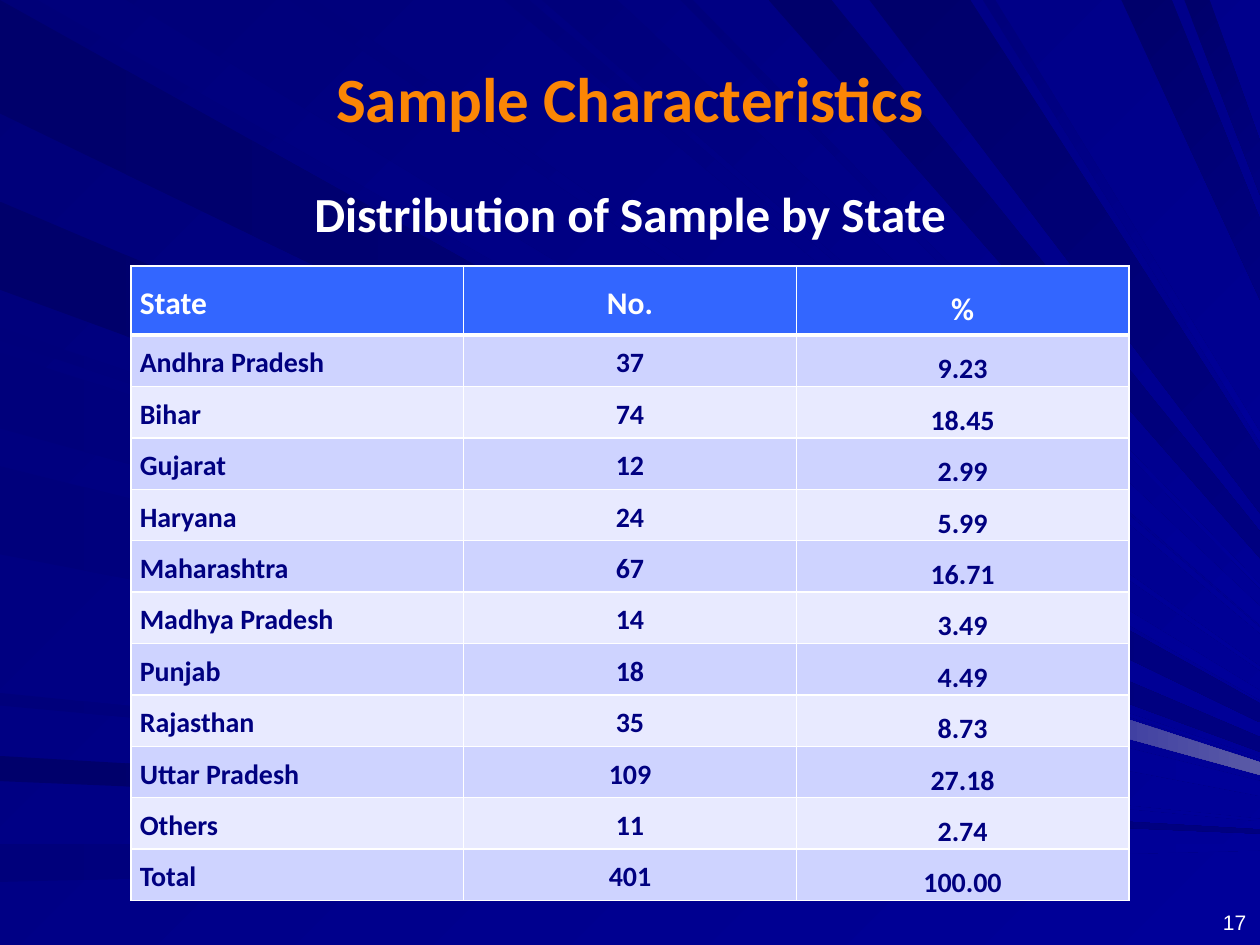
from dataclasses import dataclass

from lxml import etree
from pptx import Presentation
from pptx.dml.color import RGBColor
from pptx.enum.text import MSO_ANCHOR, PP_ALIGN
from pptx.oxml.ns import qn
from pptx.util import Inches, Pt

LEFT, CENTER, RIGHT = PP_ALIGN.LEFT, PP_ALIGN.CENTER, PP_ALIGN.RIGHT
MIDDLE, BOTTOM, TOP = MSO_ANCHOR.MIDDLE, MSO_ANCHOR.BOTTOM, MSO_ANCHOR.TOP
TITLE_ONLY = 5


@dataclass(frozen=True)
class Theme:
    """Colours, fonts and type sizes of the slide."""
    heading_font: str = "Calibri"
    number_font: str = "Arial"
    title: str = "FB8605"
    light: str = "FFFFFF"
    ink: str = "000080"
    header: str = "3366FF"
    bands: tuple = ("CED3FF", "E8EAFF")
    background: tuple = ("000078", "000099")
    dark_ray: tuple = ("00006B", "000080")
    bright_ray: tuple = ("00007B", "000099")
    glow_ray: tuple = ("000099", "5A5AA6")
    title_size: int = 36
    subtitle_size: int = 28
    header_size: int = 18
    body_size: int = 16
    number_size: int = 12


THEME = Theme()
PAGE_WIDTH, PAGE_HEIGHT = 10, 7.5
FOCUS = (12, 6.7)

DARK_LEFT = [(0, 0.9), (1.6, 2.3), (6, 6.2)]
DARK_TOP = [(6.1, 6.6), (6.9, 7.7), (8.9, 9.3), (9.4, 9.6)]
BRIGHT_LEFT = [(2.6, 2.7), (2.8, 3.4), (3.7, 4.4), (5.5, 5.6), (6.7, 7)]
BRIGHT_TOP = [(0.3, 1), (2.3, 2.5), (4, 4.2), (4.3, 4.9), (5.4, 5.5), (7.8, 7.9)]
GLOW = (2.8, 3.4)
GLOW_START = 6.35

STATES = [
    ("State", "No.", "%"),
    ("Andhra Pradesh", "37", "9.23"),
    ("Bihar", "74", "18.45"),
    ("Gujarat", "12", "2.99"),
    ("Haryana", "24", "5.99"),
    ("Maharashtra", "67", "16.71"),
    ("Madhya Pradesh", "14", "3.49"),
    ("Punjab", "18", "4.49"),
    ("Rajasthan", "35", "8.73"),
    ("Uttar Pradesh", "109", "27.18"),
    ("Others", "11", "2.74"),
    ("Total", "401", "100.00"),
]
COLUMN_STYLES = [(LEFT, 1.15), (CENTER, 1.15), (CENTER, 1.5)]


def paint_gradient(fill, colors, clockwise):
    """Fill with a linear gradient between two colours."""
    fill.gradient()
    fill.gradient_angle = (360 - clockwise) % 360
    for stop, color in zip(fill.gradient_stops, colors):
        stop.color.rgb = RGBColor.from_string(color)


def point_toward_focus(anchor, x):
    """Return the point at x on the line from an anchor to the focus."""
    share = (x - anchor[0]) / (FOCUS[0] - anchor[0])
    return Inches(x), Inches(anchor[1] + share * (FOCUS[1] - anchor[1]))


def add_ray(page, anchors, colors, clockwise, start=0):
    """Draw a ray from two edge points toward the focus, cut at the page edge."""
    first, second = anchors
    corners = [
        point_toward_focus(first, max(first[0], start)),
        point_toward_focus(first, PAGE_WIDTH),
        point_toward_focus(second, PAGE_WIDTH),
        point_toward_focus(second, max(second[0], start)),
    ]
    builder = page.shapes.build_freeform(*corners[0])
    builder.add_line_segments(corners[1:], close=True)
    ray = builder.convert_to_shape()
    ray.shadow.inherit = False
    ray.line.fill.background()
    paint_gradient(ray.fill, colors, clockwise)


def add_rays(page):
    """Fan all the rays out over the background."""
    for spans, colors in ((DARK_LEFT, THEME.dark_ray), (BRIGHT_LEFT, THEME.bright_ray)):
        for span in spans:
            add_ray(page, [(0, y) for y in span], colors, 0)
    for spans, colors in ((BRIGHT_TOP, THEME.bright_ray), (DARK_TOP, THEME.dark_ray)):
        for span in spans:
            add_ray(page, [(x, 0) for x in span], colors, 45)
    add_ray(page, [(0, y) for y in GLOW], THEME.glow_ray, 0, GLOW_START)


def write(frame, text, size, color, align, bold=True, font=THEME.heading_font):
    """Put one formatted paragraph in a text frame and return it."""
    frame.text = text
    para = frame.paragraphs[0]
    para.alignment = align
    para.font.name, para.font.size, para.font.bold = font, Pt(size), bold
    para.font.color.rgb = RGBColor.from_string(color)
    return para


def add_title(page, text):
    """Fill the title placeholder and bring it in front of the rays."""
    title = page.shapes.title
    title.left, title.top, title.width, title.height = map(Inches, (0.5, 0.3, 9, 0.95))
    title.text_frame.vertical_anchor = MIDDLE
    write(title.text_frame, text, THEME.title_size, THEME.title, CENTER)
    page.shapes.element.append(title.element)


def add_text(page, place, text, size, align, anchor=TOP, **style):
    """Add a wrapping text box in the light colour."""
    box = page.shapes.add_textbox(*map(Inches, place))
    box.text_frame.word_wrap = True
    box.text_frame.vertical_anchor = anchor
    write(box.text_frame, text, size, THEME.light, align, **style)


def add_borders(cell, top, bottom):
    """Outline a cell, with given top and bottom widths in points."""
    properties = cell._tc.get_or_add_tcPr()
    for side, width in (("L", 1), ("R", 1), ("T", top), ("B", bottom)):
        line = etree.SubElement(properties, qn(f"a:ln{side}"), w=str(Pt(width)))
        solid = etree.SubElement(line, qn("a:solidFill"))
        etree.SubElement(solid, qn("a:srgbClr"), val=THEME.light)


def add_state_table(page):
    """Add the banded table of states."""
    place = map(Inches, (1.04, 2.11, 7.92, 4.95))
    table = page.shapes.add_table(len(STATES), len(COLUMN_STYLES), *place).table
    for number, values in enumerate(STATES):
        is_header = number == 0
        table.rows[number].height = Inches(0.55 if is_header else 0.4)
        fill = THEME.header if is_header else THEME.bands[(number - 1) % 2]
        color = THEME.light if is_header else THEME.ink
        size = THEME.header_size if is_header else THEME.body_size
        for cell, text, (align, spacing) in zip(table.rows[number].cells, values, COLUMN_STYLES):
            cell.margin_left = cell.margin_right = Inches(0.07)
            cell.margin_top = cell.margin_bottom = 0
            cell.vertical_anchor = MIDDLE
            add_borders(cell, 3 if number == 1 else 1, 3 if is_header else 1)
            cell.fill.solid()
            cell.fill.fore_color.rgb = RGBColor.from_string(fill)
            write(cell.text_frame, text, size, color, align).line_spacing = spacing


def main():
    """Build the slide and save the deck."""
    deck = Presentation()
    deck.slide_width, deck.slide_height = Inches(PAGE_WIDTH), Inches(PAGE_HEIGHT)
    page = deck.slides.add_slide(deck.slide_layouts[TITLE_ONLY])
    paint_gradient(page.background.fill, THEME.background, 45)
    add_rays(page)
    add_title(page, "Sample Characteristics")
    add_state_table(page)
    add_text(page, (1, 1.41, 8, 0.57), "Distribution of Sample by State", THEME.subtitle_size, CENTER)
    add_text(page, (7.66, 7.07, 2.33, 0.4), "17", THEME.number_size, RIGHT, BOTTOM,
             bold=False, font=THEME.number_font)
    deck.save("out.pptx")


if __name__ == "__main__":
    main()
